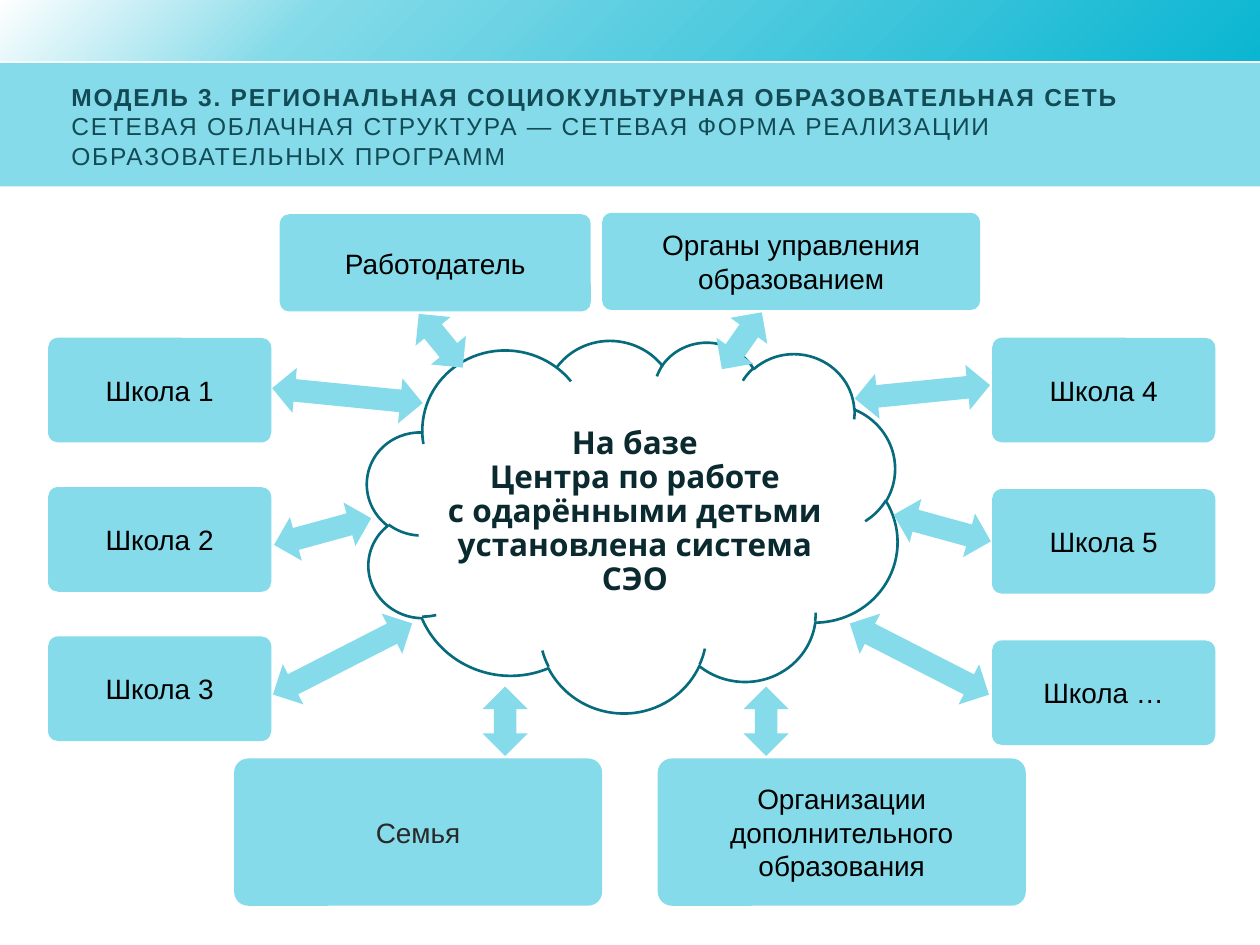
import lxml.etree
import pptx
import pptx.dml.color
import pptx.enum.shapes
import pptx.enum.text
import pptx.oxml
import pptx.oxml.ns
import pptx.util

Cm = pptx.util.Cm
Pt = pptx.util.Pt
SHAPE = pptx.enum.shapes.MSO_SHAPE
ALIGN = pptx.enum.text.PP_ALIGN
AQUA = "85DBE9"
WHITE = "FFFFFF"

TITLE = ("МОДЕЛЬ 3. РЕГИОНАЛЬНАЯ СОЦИОКУЛЬТУРНАЯ ОБРАЗОВАТЕЛЬНАЯ СЕТЬ\v"
         "СЕТЕВАЯ ОБЛАЧНАЯ СТРУКТУРА — СЕТЕВАЯ ФОРМА РЕАЛИЗАЦИИ ОБРАЗОВАТЕЛЬНЫХ ПРОГРАММ")
CENTRE = "На базе\nЦентра по работе с\u00a0одарёнными детьми установлена система СЭО"

# Columns of schools: left, top, vertical step, names
SCHOOLS = [
    (0.97, 6.81, 3.01, ["Школа 1", "Школа 2", "Школа 3"]),
    (20, 6.81, 3.05, ["Школа 4", "Школа 5", "Школа …"]),
]
# Other partners: left, top, width, height, name, text colour
PARTNERS = [
    (5.64, 4.32, 6.27, 1.96, "Работодатель", "000000"),
    (12.14, 4.29, 7.62, 1.96, "Органы управления образованием", "000000"),
    (4.72, 15.29, 7.42, 2.97, "Семья", "292929"),
    (13.26, 15.29, 7.42, 2.97, "Организации дополнительного образования", "000000"),
]
# Double arrows: left, top, length, rotation
ARROWS = [
    (8.43, 6.17, 1.4, -39.3), (14.5, 6.17, 1.4, 35),
    (6.55, 6.45, 3.05, -84.3), (18.14, 6.53, 2.74, 84.3),
    (6.05, 9.7, 2.03, -105.3), (18.54, 9.63, 2.03, 105.3),
    (6.45, 11.71, 3.15, 62.9), (18.08, 11.71, 3.15, -62.9),
    (9.73, 13.84, 1.4, 0), (14.99, 13.84, 1.4, 0),
]


def color(value):
    return pptx.dml.color.RGBColor.from_string(value)


def add_shape(page, kind, left, top, width, height, fill=AQUA, rotation=0):
    shape = page.shapes.add_shape(kind, Cm(left), Cm(top), Cm(width), Cm(height))
    shape.shadow.inherit = False
    shape.fill.solid()
    shape.fill.fore_color.rgb = color(fill)
    shape.line.fill.background()
    shape.rotation = rotation
    return shape


def write(shape, text, font, size, ink, bold=False, align=ALIGN.CENTER):
    frame = shape.text_frame
    frame.word_wrap = True
    frame.vertical_anchor = pptx.enum.text.MSO_ANCHOR.MIDDLE
    frame.text = text
    for para in frame.paragraphs:
        para.alignment = align
        for span in para.runs:
            span.font.name = font
            span.font.size = Pt(size)
            span.font.bold = bold
            span.font.color.rgb = color(ink)
    return frame


def add_box(page, left, top, width, height, name, ink="000000"):
    box = add_shape(page, SHAPE.ROUNDED_RECTANGLE, left, top, width, height)
    box.adjustments[0] = 0.096
    write(box, name, "Arial", 16, ink)


def add_gradient_band(page):
    band = add_shape(page, SHAPE.RECTANGLE, 0, -0.05, 25.4, 1.27)
    stops = "".join(
        f'<a:gs pos="{place * 1000}"><a:srgbClr val="{value}"/></a:gs>'
        for place, value in [(0, "0BB6D2"), (75, "83DAE8"), (100, WHITE)])
    gradient = pptx.oxml.parse_xml(
        f'<a:gradFill {pptx.oxml.ns.nsdecls("a")} rotWithShape="1"><a:gsLst>{stops}</a:gsLst>'
        '<a:path path="circle"><a:fillToRect l="100000" t="100000"/></a:path></a:gradFill>')
    properties = band._element.spPr
    solid = properties.find(pptx.oxml.ns.qn("a:solidFill"))
    properties.replace(solid, gradient)


def add_title(page):
    add_shape(page, SHAPE.RECTANGLE, 0, 1.27, 25.4, 2.06)
    title = add_shape(page, SHAPE.RECTANGLE, 0, 1.32, 25.4, 2.44)
    para = write(title, TITLE, "Arial", 14, "124B55", align=ALIGN.LEFT).paragraphs[0]
    para._p.get_or_add_pPr().set("marL", str(Cm(1.19)))
    para.runs[0].font.bold = True
    for span in para.runs:
        span.font._element.set("spc", "100")


def add_cloud(page):
    cloud = add_shape(page, SHAPE.CLOUD, 7.34, 6.71, 10.77, 7.65, WHITE, 7.4)
    cloud.line.color.rgb = color("066B7C")
    cloud.line.width = Pt(1.5)


def add_centre_text(page):
    box = add_shape(page, SHAPE.RECTANGLE, 8.61, 8.31, 8.38, 4.04, WHITE)
    frame = write(box, CENTRE, "Open Sans", 18, "0A2A30", bold=True)
    frame.margin_left = frame.margin_right = Cm(0.13)
    frame.margin_top = frame.margin_bottom = Cm(0.13)
    for para in frame.paragraphs:
        para.line_spacing = 0.9


def main():
    deck = pptx.Presentation()
    deck.slide_width, deck.slide_height = Cm(25.4), Cm(19.05)
    page = deck.slides.add_slide(deck.slide_layouts[6])

    # Header
    add_gradient_band(page)
    add_title(page)

    # Cloud with the partners around it
    add_cloud(page)
    for left, top, step, names in SCHOOLS:
        for row, name in enumerate(names):
            add_box(page, left, top + row * step, 4.5, 2.11, name)
    for partner in PARTNERS:
        add_box(page, *partner)

    # Links between the partners and the cloud
    for left, top, length, rotation in ARROWS:
        add_shape(page, SHAPE.UP_DOWN_ARROW, left, top, 0.91, length, rotation=rotation)
    add_centre_text(page)

    deck.save("out.pptx")


if __name__ == "__main__":
    main()
